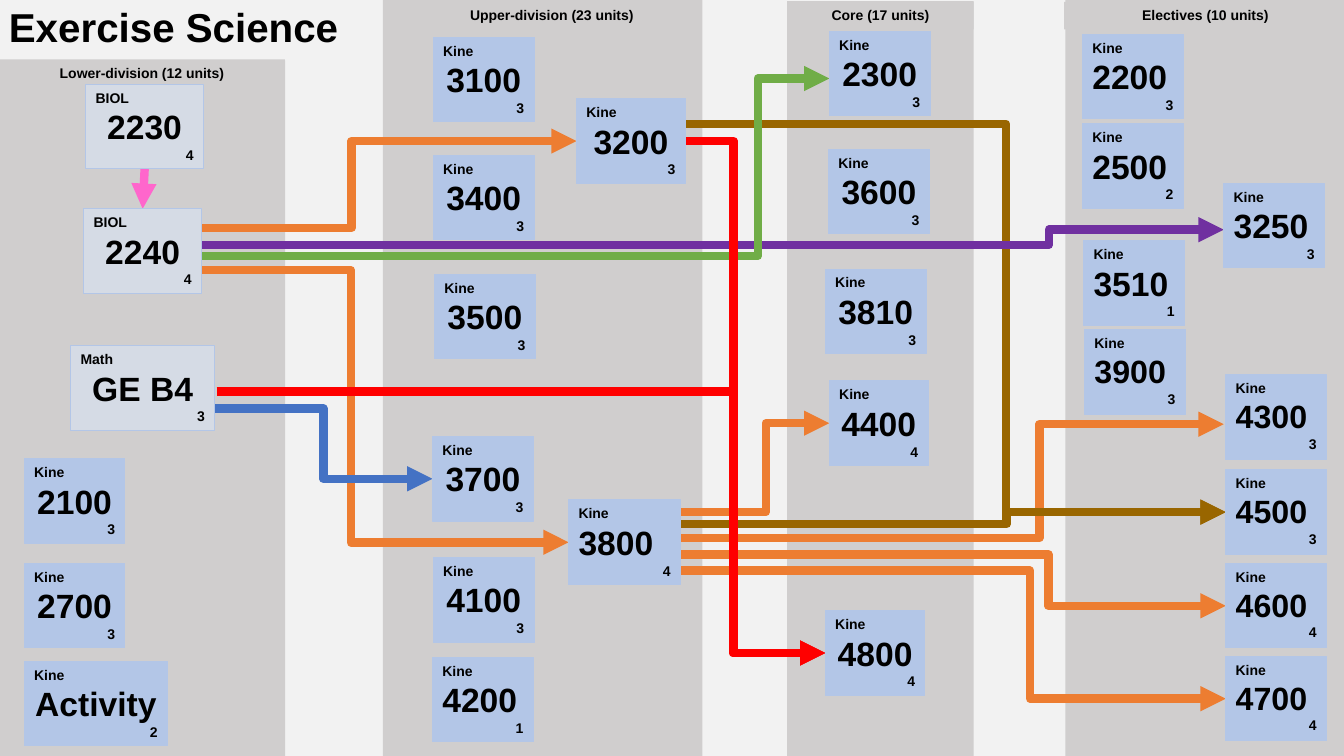
from dataclasses import dataclass

import lxml.etree
import pptx
import pptx.dml.color
import pptx.enum.shapes
import pptx.enum.text
import pptx.oxml.ns
import pptx.util

Cm, Pt = pptx.util.Cm, pptx.util.Pt
RGBColor = pptx.dml.color.RGBColor
ALIGN = pptx.enum.text.PP_ALIGN
ANCHOR = pptx.enum.text.MSO_ANCHOR
AUTO_SIZE = pptx.enum.text.MSO_AUTO_SIZE
CONNECTOR = pptx.enum.shapes.MSO_CONNECTOR
qn = pptx.oxml.ns.qn

BACKGROUND = RGBColor(0xF2, 0xF2, 0xF2)
GREY = RGBColor(0xD0, 0xCE, 0xCE)
COURSE_BLUE = RGBColor(0xB3, 0xC6, 0xE7)
SCIENCE_GREY = RGBColor(0xD5, 0xDB, 0xE5)
BLACK = RGBColor(0, 0, 0)
PINK = RGBColor(0xFF, 0x66, 0xCC)
ORANGE = RGBColor(0xED, 0x7D, 0x31)
BLUE = RGBColor(0x44, 0x72, 0xC4)
BROWN = RGBColor(0x99, 0x66, 0x00)
PURPLE = RGBColor(0x70, 0x30, 0xA0)
GREEN = RGBColor(0x70, 0xAD, 0x47)
RED = RGBColor(0xFF, 0, 0)

TOP, LEFT, BOTTOM, RIGHT = range(4)
BOX_HEIGHT, HEADER_HEIGHT = 2.13, 0.69


@dataclass
class Area:
    """A grey column and its header; lengths in cm."""
    title: str
    column: tuple[float, float, float, float]
    header: tuple[float, float, float]


@dataclass
class Course:
    code: str
    units: int
    x: float
    y: float
    w: float = 2.54
    dept: str = "Kine"
    size: float = 24
    align: ALIGN = ALIGN.CENTER
    fill: RGBColor = COURSE_BLUE


@dataclass
class Route:
    """A prerequisite arrow that turns at x = bend; codes name joined boxes."""
    color: RGBColor
    start: tuple[float, float]
    bend: float | None
    end: tuple[float, float]
    target: str = ""
    source: str = ""


AREAS = [
    Area("Core (17 units)", (19.84, 0.03, 4.7, 19.02), (19.84, 0.05, 4.7)),
    Area("Lower-division (12 units)", (0, 1.52, 7.19, 17.53), (-0.03, 1.5, 7.21)),
    Area("Electives (10 units)", (26.85, 0, 7.11, 19.05), (26.82, 0.05, 7.11)),
    Area("Upper-division (23 units)", (9.65, 0, 8.05, 19.05), (10.26, 0.03, 7.29)),
]

COURSES = [
    # Lower division
    Course("2230", 4, 2.16, 2.13, 2.97, "BIOL", fill=SCIENCE_GREY),
    Course("2240", 4, 2.11, 5.26, 2.97, "BIOL", fill=SCIENCE_GREY),
    Course("GE B4", 3, 1.78, 8.71, 3.63, "Math", fill=SCIENCE_GREY),
    Course("2100", 3, 0.61, 11.56),
    Course("2700", 3, 0.61, 14.2),
    Course("Activity", 2, 0.61, 16.66, 3.61),
    # Upper division
    Course("3100", 3, 10.92, 0.94),
    Course("3400", 3, 10.92, 3.91),
    Course("3500", 3, 10.95, 6.91),
    Course("3700", 3, 10.9, 11),
    Course("4100", 3, 10.92, 14.05),
    Course("4200", 1, 10.9, 16.56, align=ALIGN.LEFT),
    Course("3200", 3, 14.53, 2.49, 2.74),
    Course("3800", 4, 14.33, 12.6, 2.82, align=ALIGN.LEFT),
    # Core
    Course("2300", 3, 20.9, 0.79),
    Course("3600", 3, 20.88, 3.76),
    Course("3810", 3, 20.8, 6.78),
    Course("4400", 4, 20.9, 9.6, 2.49),
    Course("4800", 4, 20.8, 15.39, 2.51),
    # Electives
    Course("2200", 3, 27.28, 0.86, align=ALIGN.LEFT),
    Course("2500", 2, 27.28, 3.12, align=ALIGN.LEFT),
    Course("3510", 1, 27.31, 6.07, align=ALIGN.LEFT),
    Course("3900", 3, 27.33, 8.31, size=23, align=ALIGN.LEFT),
    Course("3250", 3, 30.84, 4.62, align=ALIGN.LEFT),
    Course("4300", 3, 30.89, 9.45, size=23, align=ALIGN.LEFT),
    Course("4500", 3, 30.89, 11.84, size=23, align=ALIGN.LEFT),
    Course("4600", 4, 30.89, 14.2, size=23, align=ALIGN.LEFT),
    Course("4700", 4, 30.89, 16.54, size=23, align=ALIGN.LEFT),
]

ROUTES = [
    Route(PINK, (3.63, 4.27), None, (3.63, 5.23), "2240", "2230"),
    Route(ORANGE, (4.9, 6.81), 8.84, (14.33, 13.67), "3800"),
    Route(BLUE, (5.41, 10.29), 8.15, (10.9, 12.07), "3700"),
    Route(ORANGE, (17.04, 14.38), 25.96, (30.89, 17.6), "4700"),
    Route(ORANGE, (17.02, 13.97), 26.42, (30.89, 15.27), "4600"),
    Route(ORANGE, (16.97, 13.56), 26.19, (30.84, 10.69)),
    Route(ORANGE, (5.05, 5.74), 8.86, (14.53, 3.56), "3200"),
    Route(BROWN, (17.15, 3.12), 25.35, (30.89, 12.9), "4500"),
    Route(PURPLE, (4.9, 6.17), 26.42, (30.84, 5.79)),
    Route(GREEN, (5.08, 6.45), 19.1, (20.9, 1.98)),
    Route(ORANGE, (17.04, 12.9), 19.3, (20.9, 10.69), "4400"),
    Route(BROWN, (17.09, 13.21), 25.37, (30.89, 12.9), "4500"),
    Route(RED, (17.27, 3.56), 18.49, (20.8, 16.46), "4800", "3200"),
    Route(RED, (5.46, 9.86), 18.47, (20.8, 16.46), "4800"),
]


def write(p, text: str, size: float, align: ALIGN) -> None:
    p.alignment = align
    r = p.add_run()
    r.text = text
    for name, value in {"name": "Arial", "size": Pt(size), "bold": True}.items():
        setattr(r.font, name, value)
    r.font.color.rgb = BLACK


def add_box(s, x: float, y: float, w: float, h: float, fill: RGBColor,
            lines: list[tuple[str, float, ALIGN]], border: RGBColor | None = None):
    sp = s.shapes.add_shape(pptx.enum.shapes.MSO_SHAPE.RECTANGLE, Cm(x), Cm(y), Cm(w), Cm(h))
    sp.shadow.inherit = False
    sp.fill.solid()
    sp.fill.fore_color.rgb = fill
    if border is None:
        sp.line.fill.background()
    else:
        sp.line.color.rgb = border
        sp.line.width = Pt(0.75)
    tf = sp.text_frame
    if lines:
        frame = {"word_wrap": True, "vertical_anchor": ANCHOR.TOP,
                 "auto_size": AUTO_SIZE.SHAPE_TO_FIT_TEXT}
        for name, value in frame.items():
            setattr(tf, name, value)
    for i, line in enumerate(lines):
        write(tf.add_paragraph() if i else tf.paragraphs[0], *line)
    return sp


def add_course(s, c: Course):
    lines = [(c.dept, 10, ALIGN.LEFT), (c.code, c.size, c.align), (str(c.units), 10, ALIGN.RIGHT)]
    return add_box(s, c.x, c.y, c.w, BOX_HEIGHT, c.fill, lines, COURSE_BLUE)


def add_route(s, route: Route):
    kind = CONNECTOR.STRAIGHT if route.bend is None else CONNECTOR.ELBOW
    (x1, y1), (x2, y2) = route.start, route.end
    cxn = s.shapes.add_connector(kind, Cm(x1), Cm(y1), Cm(x2), Cm(y2))
    cxn.line.color.rgb = route.color
    cxn.line.width = Pt(6)
    spPr = cxn._element.spPr
    lxml.etree.SubElement(spPr.find(qn("a:ln")), qn("a:tailEnd"), type="triangle")
    lxml.etree.SubElement(spPr, qn("a:effectLst"))
    if route.bend is not None:
        share = round((route.bend - x1) / (x2 - x1) * 100000)
        guides = spPr.find(qn("a:prstGeom")).find(qn("a:avLst"))
        lxml.etree.SubElement(guides, qn("a:gd"), name="adj1", fmla=f"val {share}")
    return cxn


def main() -> None:
    prs = pptx.Presentation()
    prs.slide_width, prs.slide_height = Cm(33.87), Cm(19.05)
    s = prs.slides.add_slide(prs.slide_layouts[5])
    s.background.fill.solid()
    s.background.fill.fore_color.rgb = BACKGROUND

    # Title
    title = s.shapes.title
    place = {"left": Cm(-0.03), "top": Cm(0), "width": Cm(10.11), "height": Cm(1.47)}
    for name, value in place.items():
        setattr(title, name, value)
    title.text_frame.vertical_anchor = ANCHOR.MIDDLE
    p = title.text_frame.paragraphs[0]
    p.line_spacing = 0.9
    write(p, "Exercise Science", 28.8, ALIGN.LEFT)

    # Columns and their headers
    for area in AREAS:
        add_box(s, *area.column, GREY, [])
    for area in AREAS:
        add_box(s, *area.header, HEADER_HEIGHT, GREY, [(area.title, 10, ALIGN.CENTER)])

    # Arrows lie behind the courses, then are joined to them
    arrows = [(route, add_route(s, route)) for route in ROUTES]
    boxes = {c.code: add_course(s, c) for c in COURSES}
    for route, cxn in arrows:
        straight = route.bend is None
        if route.source:
            cxn.begin_connect(boxes[route.source], BOTTOM if straight else RIGHT)
        if route.target:
            cxn.end_connect(boxes[route.target], TOP if straight else LEFT)

    prs.save("out.pptx")


if __name__ == "__main__":
    main()
